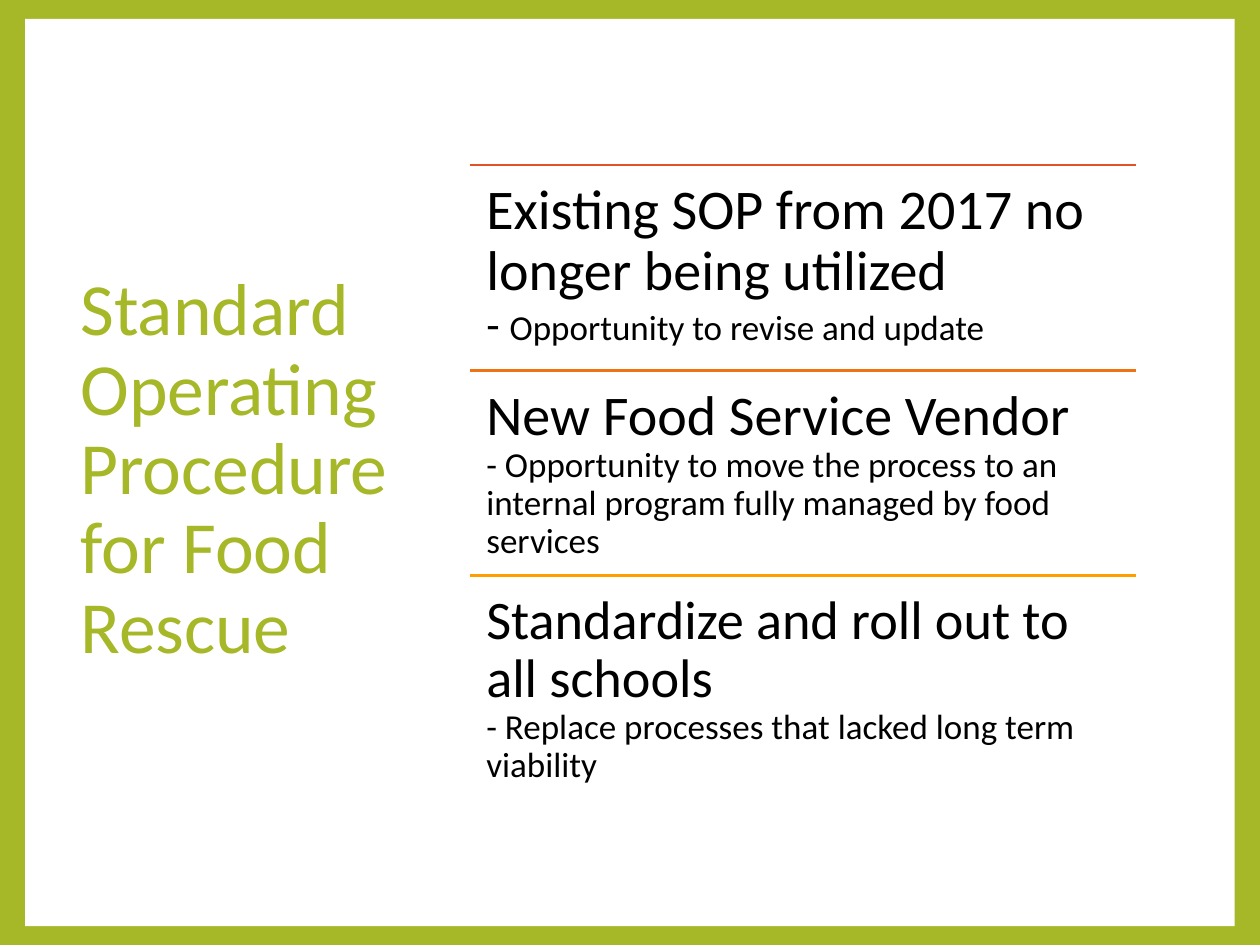
import pptx
import pptx.util
import pptx.dml.color
import pptx.enum.shapes
import pptx.enum.text
import pptx.oxml.ns
import lxml.etree

W, H = 10, 7.5
GREEN, WHITE, BLACK = "A6B727", "FFFFFF", "000000"
TITLE = "Standard Operating Procedure for Food Rescue"
SECTIONS = [
    ("DF5327", [("Existing SOP from 2017 no longer being utilized", 32)],
     [("- ", 25), ("Opportunity to revise and update", 20)]),
    ("EF7213", [("New Food Service Vendor", 32)],
     [("- Opportunity to move the process to an internal program fully managed by food services", 20)]),
    ("FE9E00", [("Standardize and roll out to all schools", 31)],
     [("- Replace processes that lacked long term viability", 20)]),
]
LEFT, TOP, COL_W, ROW_H = 3.73, 1.31, 5.29, 1.63


def rgb(value):
    """Return a colour from a hex string."""
    return pptx.dml.color.RGBColor.from_string(value)


def inches(*values):
    """Return lengths given in inches."""
    return [pptx.util.Inches(v) for v in values]


def add_frame(s):
    """Draw the green border around a white panel."""
    s.background.fill.solid()
    s.background.fill.fore_color.rgb = rgb(GREEN)
    mx, my = 0.02 * W, 0.02 * H
    sp = s.shapes.add_shape(pptx.enum.shapes.MSO_SHAPE.RECTANGLE,
                            *inches(mx, my, W - 2 * mx, H - 2 * my))
    sp.shadow.inherit = False
    sp.fill.solid()
    sp.fill.fore_color.rgb = rgb(WHITE)
    sp.line.fill.background()


def add_text(s, box, lines, color, insets, anchor):
    """Add one paragraph whose lines are lists of (text, size) runs."""
    tf = s.shapes.add_textbox(*inches(*box)).text_frame
    tf.word_wrap = True
    tf.vertical_anchor = anchor
    tf.margin_left, tf.margin_top, tf.margin_right, tf.margin_bottom = inches(*insets)
    p = tf.paragraphs[0]
    p.line_spacing = 0.9
    p.font.name = "Calibri"
    p.font.color.rgb = rgb(color)
    for i, line in enumerate(lines):
        if i:
            p.add_line_break()
        for text, size in line:
            r = p.add_run()
            r.text = text
            r.font.size = pptx.util.Pt(size)


def add_rule(s, y, color):
    """Draw the line above a section."""
    c = s.shapes.add_connector(pptx.enum.shapes.MSO_CONNECTOR.STRAIGHT,
                               *inches(LEFT, y, LEFT + COL_W, y))
    c.line.color.rgb = rgb(color)
    c.line.width = pptx.util.Pt(1.5)
    props = c.element.find(pptx.oxml.ns.qn("p:spPr"))
    lxml.etree.SubElement(props, pptx.oxml.ns.qn("a:effectLst"))


def main():
    """Build and save the slide."""
    prs = pptx.Presentation()
    prs.slide_width, prs.slide_height = inches(W, H)
    s = prs.slides.add_slide(prs.slide_layouts[6])
    anchor = pptx.enum.text.MSO_ANCHOR
    add_frame(s)
    add_text(s, (0.54, 0.67, 2.76, 6.13), [[(TITLE, 42)]], GREEN,
             (0.1, 0.05, 0.1, 0.05), anchor.MIDDLE)
    for row, (color, heading, detail) in enumerate(SECTIONS):
        y = TOP + row * ROW_H
        add_rule(s, y, color)
        add_text(s, (LEFT, y, COL_W, ROW_H), [heading, detail], BLACK,
                 [0.13] * 4, anchor.TOP)
    prs.save("out.pptx")


if __name__ == "__main__":
    main()
